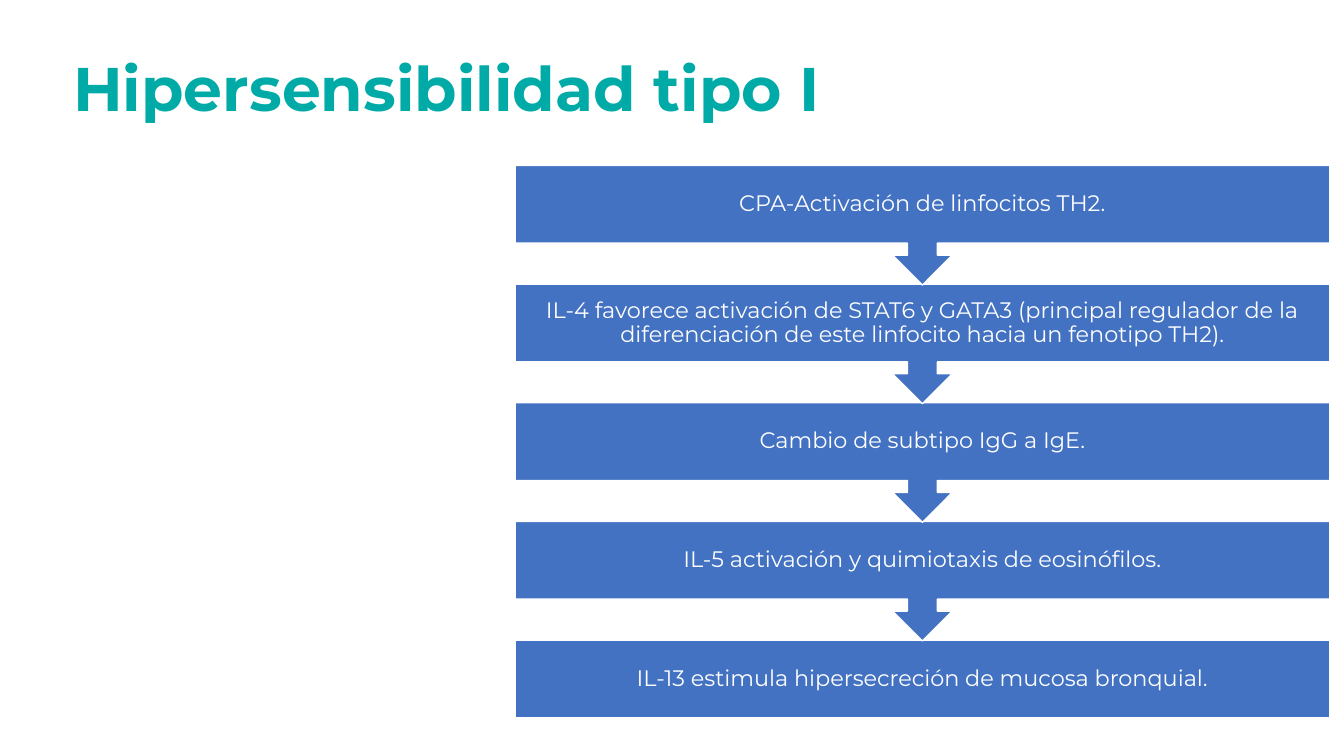
from pptx import Presentation
from pptx.dml.color import RGBColor
from pptx.enum.shapes import MSO_SHAPE
from pptx.enum.text import MSO_ANCHOR, MSO_AUTO_SIZE, PP_ALIGN
from pptx.util import Pt

TEAL = RGBColor(0x00, 0xAA, 0xA7)
BLUE = RGBColor(0x43, 0x72, 0xC3)
WHITE = RGBColor(0xFF, 0xFF, 0xFF)

RECTANGLE = MSO_SHAPE.RECTANGLE
CALLOUT = MSO_SHAPE.DOWN_ARROW_CALLOUT
MIDDLE = MSO_ANCHOR.MIDDLE
LEFT, CENTER = PP_ALIGN.LEFT, PP_ALIGN.CENTER
NO_AUTOFIT = MSO_AUTO_SIZE.NONE

TITLE_ONLY = 5

STEPS = [
    "CPA-Activación de linfocitos TH2.",
    "IL-4 favorece activación de STAT6 y GATA3 (principal regulador de la "
    "diferenciación de este linfocito hacia un fenotipo TH2).",
    "Cambio de subtipo IgG a IgE.",
    "IL-5 activación y quimiotaxis de eosinófilos.",
    "IL-13 estimula hipersecreción de mucosa bronquial.",
]
STEP_LEFT, STEP_TOP, STEP_WIDTH = 368, 118.2, 581.8
STEP_PITCH = 84.75
BOX_HEIGHT = 55.4
CALLOUT_HEIGHT = 85.4


class SlideBuilder:
    font = "Montserrat"
    line_spacing = 0.9

    def __init__(self, prs):
        self.slide = prs.slides.add_slide(prs.slide_layouts[TITLE_ONLY])

    def set_text(self, sp, text, size, color, align, margins, bold=False):
        tf = sp.text_frame
        tf.text = text
        tf.word_wrap = True
        tf.auto_size = NO_AUTOFIT
        tf.vertical_anchor = MIDDLE
        tf.margin_left = tf.margin_right = Pt(margins[0])
        tf.margin_top = tf.margin_bottom = Pt(margins[1])
        p = tf.paragraphs[0]
        p.alignment = align
        p.line_spacing = self.line_spacing
        font = p.runs[0].font
        font.name = self.font
        font.size = Pt(size)
        font.bold = bold
        font.color.rgb = color

    def title(self, text, left, top, width, height):
        sp = self.slide.shapes.title
        sp.left, sp.top = Pt(left), Pt(top)
        sp.width, sp.height = Pt(width), Pt(height)
        self.set_text(sp, text, 44, TEAL, LEFT, (7.2, 3.6), bold=True)

    def step(self, text, top, is_last):
        kind, height = (RECTANGLE, BOX_HEIGHT) if is_last else (CALLOUT, CALLOUT_HEIGHT)
        sp = self.slide.shapes.add_shape(
            kind, Pt(STEP_LEFT), Pt(top), Pt(STEP_WIDTH), Pt(height))
        if not is_last:
            for i, value in enumerate((0.25, 0.25, 0.25, 0.65)):
                sp.adjustments[i] = value
        sp.shadow.inherit = False
        sp.fill.solid()
        sp.fill.fore_color.rgb = BLUE
        sp.line.color.rgb = WHITE
        sp.line.width = Pt(1)
        self.set_text(sp, text, 16, WHITE, CENTER, (8.6, 8.6))


def main():
    prs = Presentation()
    prs.slide_width, prs.slide_height = Pt(960), Pt(540)
    s = SlideBuilder(prs)
    s.title("Hipersensibilidad tipo I", 45, 13.5, 828, 104.4)
    last = len(STEPS) - 1
    # Bottom step first, so that each arrow tip lies over the next box
    for i in range(last, -1, -1):
        s.step(STEPS[i], STEP_TOP + i * STEP_PITCH, i == last)
    prs.save("out.pptx")


if __name__ == "__main__":
    main()
